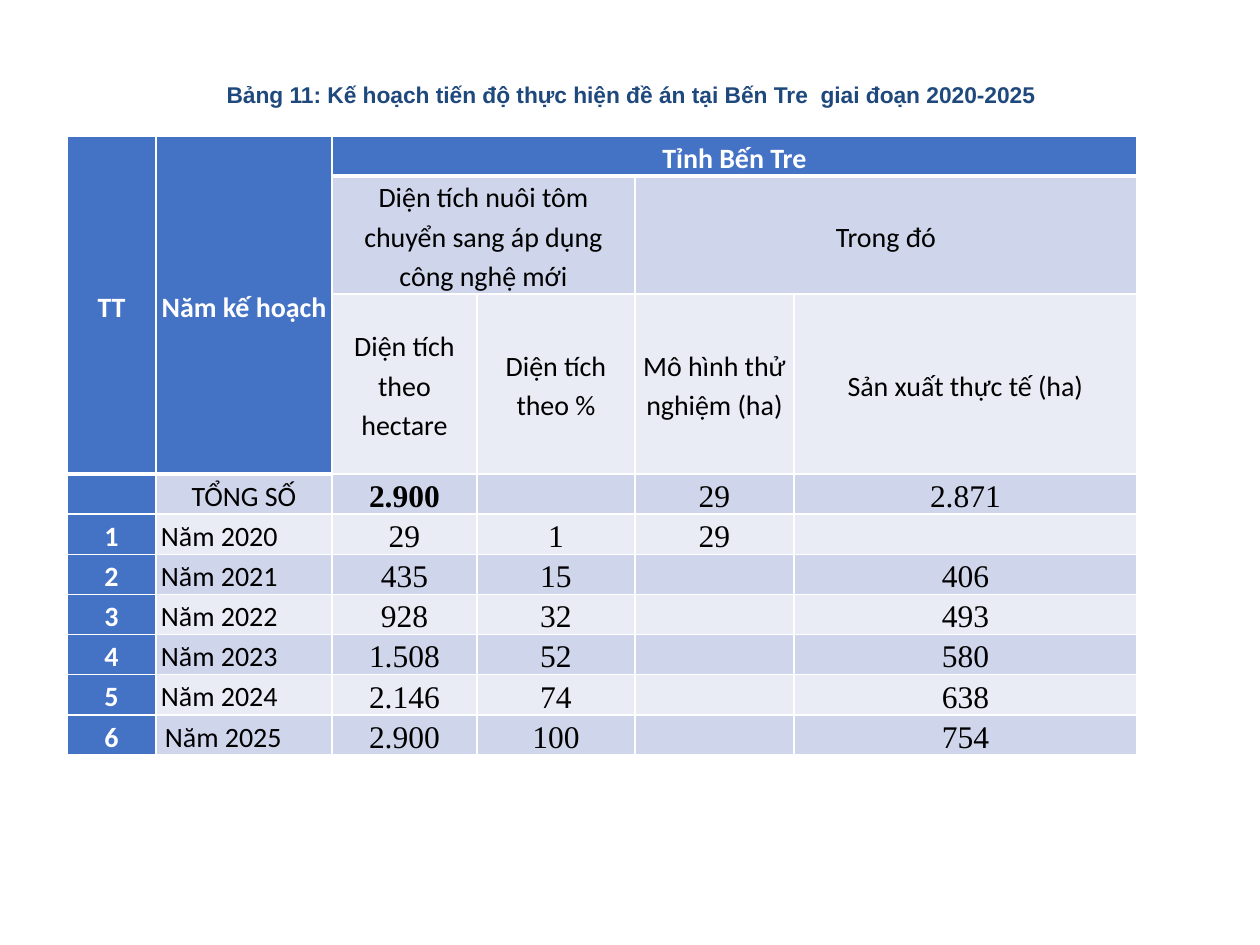
from dataclasses import dataclass

from lxml import etree
from pptx import Presentation
from pptx.dml.color import RGBColor
from pptx.enum.text import MSO_ANCHOR, PP_ALIGN
from pptx.oxml.ns import qn
from pptx.util import Emu, Pt

CENTER, LEFT = PP_ALIGN.CENTER, PP_ALIGN.LEFT
MIDDLE = MSO_ANCHOR.MIDDLE
PX = 914400 / 126  # EMU in one px

COLORS = {
    "title": "1F497D",
    "header": "4472C4",
    "band_dark": "CFD5EA",
    "band_light": "E9EBF5",
    "white": "FFFFFF",
    "black": "000000",
}

COL_WIDTHS = [89, 176, 145, 158, 159, 343]
ROW_HEIGHTS = [40, 118, 180] + [40] * 7
HEADER_ROWS = 3
TOTAL_ROW = 3

ROWS = [
    ["TT", "Năm kế hoạch", "Tỉnh Bến Tre", "", "", ""],
    ["", "", "Diện tích nuôi tôm chuyển sang áp dụng công nghệ mới", "",
     "Trong đó", ""],
    ["", "", "Diện tích theo hectare", "Diện tích theo %",
     "Mô hình thử nghiệm (ha)", "Sản xuất thực tế (ha)"],
    ["", "TỔNG SỐ", "2.900", "", "29", "2.871"],
    ["1", "Năm 2020", "29", "1", "29", ""],
    ["2", "Năm 2021", "435", "15", "", "406"],
    ["3", "Năm 2022", "928", "32", "", "493"],
    ["4", "Năm 2023", "1.508", "52", "", "580"],
    ["5", "Năm 2024", "2.146", "74", "", "638"],
    ["6", "Năm 2025", "2.900", "100", "", "754"],
]
# First and last cell of each merged area, as (row, column)
MERGES = [((0, 0), (2, 0)), ((0, 1), (2, 1)), ((0, 2), (0, 5)),
          ((1, 2), (1, 3)), ((1, 4), (1, 5))]


@dataclass
class CellStyle:
    font: str
    size: int
    color: str
    fill: str
    bold: bool
    align: PP_ALIGN
    margin: int
    top: int
    bottom: int


def px(n: int) -> Emu:
    return Emu(round(n * PX))


def rgb(name: str) -> RGBColor:
    return RGBColor.from_string(COLORS[name])


def add_run(p, text: str, font: str, size: int, color: str, bold: bool) -> None:
    r = p.add_run()
    r.text = text
    r.font.name, r.font.size, r.font.bold = font, Pt(size), bold
    r.font.color.rgb = rgb(color)


def style_for(row: int, col: int) -> CellStyle:
    """Work out a cell's look from its place in the table."""
    header = row == 0 or col == 0 or (col == 1 and row < HEADER_ROWS)
    label = row < HEADER_ROWS or col < 2
    last_year = col == 1 and row == len(ROWS) - 1
    # Heavy rule under the blue header area
    rule_row = HEADER_ROWS if col < 2 else 1
    above_rule = row == rule_row - 1 or (col < 2 and row == 0)
    band = "band_dark" if row % 2 else "band_light"
    return CellStyle(
        font="Calibri" if label else "Times New Roman",
        size=16 if label else 18,
        color="white" if header else "black",
        fill="header" if header else band,
        bold=header or (row, col) == (TOTAL_ROW, 2),
        align=LEFT if col == 1 and row > TOTAL_ROW else CENTER,
        margin=5 if label and not last_year else 9,
        top=3 if row == rule_row else 1,
        bottom=3 if above_rule else 1,
    )


def set_borders(cell, top: int, bottom: int) -> None:
    tc_pr = cell._tc.get_or_add_tcPr()
    widths = {"lnL": 1, "lnR": 1, "lnT": top, "lnB": bottom}
    for i, (tag, width) in enumerate(widths.items()):
        ln = etree.Element(qn(f"a:{tag}"), w=str(Pt(width)))
        fill = etree.SubElement(ln, qn("a:solidFill"))
        etree.SubElement(fill, qn("a:srgbClr"), val=COLORS["white"])
        tc_pr.insert(i, ln)


def fill_cell(cell, text: str, st: CellStyle) -> None:
    cell.fill.solid()
    cell.fill.fore_color.rgb = rgb(st.fill)
    cell.vertical_anchor = MIDDLE
    cell.margin_left = cell.margin_right = px(st.margin)
    cell.margin_top = cell.margin_bottom = 0
    set_borders(cell, st.top, st.bottom)
    if text:
        p = cell.text_frame.paragraphs[0]
        p.alignment, p.line_spacing, p.space_after = st.align, 1.15, Pt(10)
        add_run(p, text, st.font, st.size, st.color, st.bold)


def add_title(s) -> None:
    sp = s.shapes.title
    sp.left, sp.top, sp.width, sp.height = px(207), px(74), px(847), px(40)
    tf = sp.text_frame
    tf.word_wrap = False
    tf.vertical_anchor = MIDDLE
    p = tf.paragraphs[0]
    p.alignment = CENTER
    add_run(p, "Bảng 11: Kế hoạch tiến độ thực hiện đề án tại Bến Tre  "
               "giai đoạn 2020-2025", "Arial", 13, "title", True)


def add_plan_table(s) -> None:
    tbl = s.shapes.add_table(
        len(ROWS), len(COL_WIDTHS), px(67), px(136),
        px(sum(COL_WIDTHS)), px(sum(ROW_HEIGHTS))).table
    tbl.first_row = tbl.horz_banding = False
    for column, width in zip(tbl.columns, COL_WIDTHS):
        column.width = px(width)
    for row, height in zip(tbl.rows, ROW_HEIGHTS):
        row.height = px(height)
    for first, last in MERGES:
        tbl.cell(*first).merge(tbl.cell(*last))
    for r, texts in enumerate(ROWS):
        for c, text in enumerate(texts):
            fill_cell(tbl.cell(r, c), text, style_for(r, c))


def main() -> None:
    prs = Presentation()
    prs.slide_width, prs.slide_height = px(1260), px(945)
    s = prs.slides.add_slide(prs.slide_layouts[5])  # Title Only
    add_title(s)
    add_plan_table(s)
    prs.save("out.pptx")


if __name__ == "__main__":
    main()
